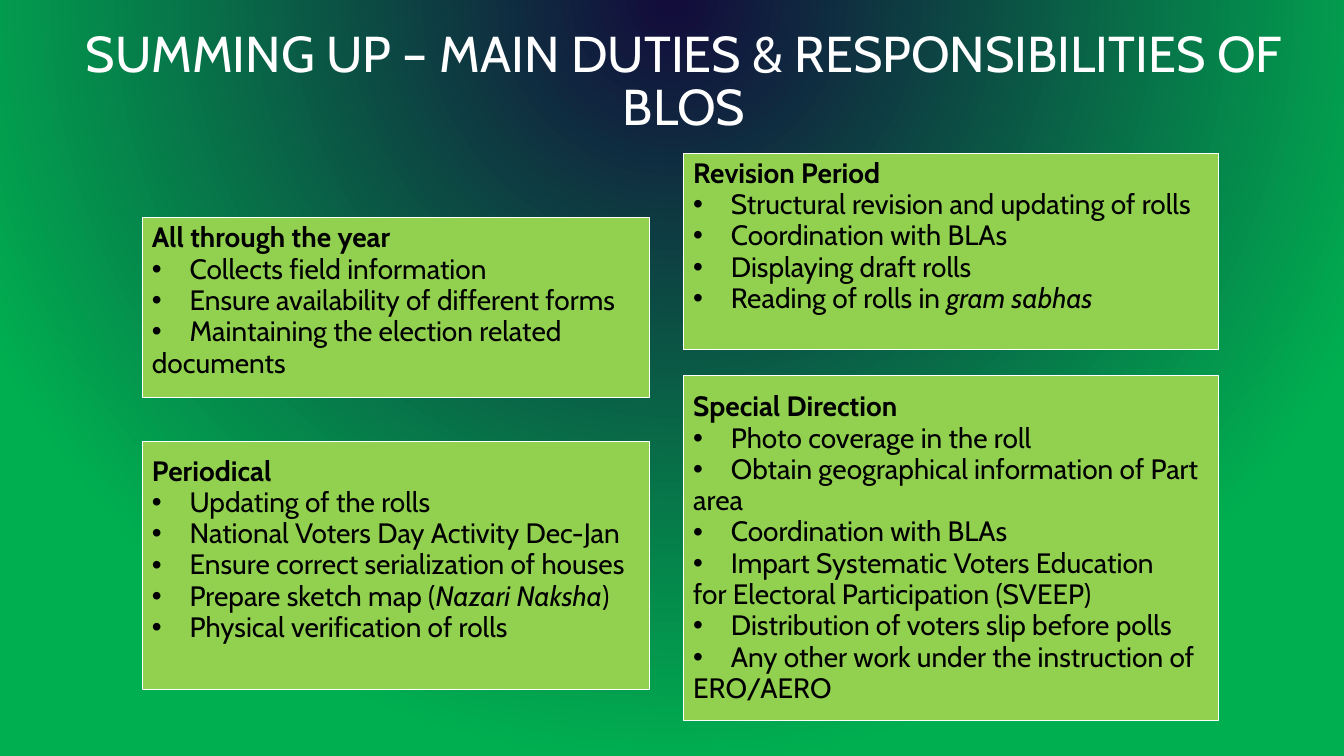
import lxml.etree
import pptx
import pptx.dml.color
import pptx.enum.shapes
import pptx.enum.text
import pptx.oxml
import pptx.oxml.ns
import pptx.util

Cm = pptx.util.Cm
Pt = pptx.util.Pt
RGBColor = pptx.dml.color.RGBColor
Anchor = pptx.enum.text.MSO_ANCHOR
qn = pptx.oxml.ns.qn

WHITE = RGBColor(0xFF, 0xFF, 0xFF)
BLACK = RGBColor(0, 0, 0)
LIME = RGBColor(0x92, 0xD0, 0x50)
NAVY = RGBColor(0x13, 0x0D, 0x3C)
GREEN = RGBColor(0x00, 0xB0, 0x50)
FONT = "Cabin"

LEFT_COLUMN = (3.58, 12.8)
RIGHT_COLUMN = (17.22, 13.49)
INSET = 0.13
BULLET_INDENT = Cm(0.95)

# "_" encloses italics; "\n" starts an unbulleted line
DUTIES = [
    (LEFT_COLUMN, 5.49, 4.52, Anchor.TOP, INSET, "All through the year", [
        "Collects field information",
        "Ensure availability of different forms",
        "Maintaining the election related\ndocuments",
    ]),
    (LEFT_COLUMN, 11.13, 6.25, Anchor.MIDDLE, 0.92, "Periodical", [
        "Updating of the rolls",
        "National Voters Day Activity Dec-Jan",
        "Ensure correct serialization of houses",
        "Prepare sketch map (_Nazari Naksha_)",
        "Physical verification of rolls",
    ]),
    (RIGHT_COLUMN, 3.86, 4.95, Anchor.TOP, INSET, "Revision Period", [
        "Structural revision and updating of rolls",
        "Coordination with BLAs",
        "Displaying draft rolls",
        "Reading of rolls in _gram sabhas_",
    ]),
    (RIGHT_COLUMN, 9.47, 8.69, Anchor.MIDDLE, INSET, "Special Direction", [
        "Photo coverage in the roll",
        "Obtain geographical information of Part\narea",
        "Coordination with BLAs",
        "Impart Systematic Voters Education\nfor Electoral Participation (SVEEP)",
        "Distribution of voters slip before polls",
        "Any other work under the instruction of\nERO/AERO",
    ]),
]


def paint_background(slide):
    slide.background.fill.gradient()
    gradient = next(slide.element.iter(qn("a:gradFill")))
    for part in list(gradient):
        gradient.remove(part)
    for part in (
        f'<a:gsLst {pptx.oxml.ns.nsdecls("a")}>'
        f'<a:gs pos="1000"><a:srgbClr val="{NAVY}"><a:alpha val="76000"/></a:srgbClr></a:gs>'
        f'<a:gs pos="100000"><a:srgbClr val="{GREEN}"/></a:gs></a:gsLst>',
        f'<a:path {pptx.oxml.ns.nsdecls("a")} path="circle">'
        '<a:fillToRect l="50000" t="-80000" r="50000" b="180000"/></a:path>',
    ):
        gradient.append(pptx.oxml.parse_xml(part))


def add_run(paragraph, text, size, color, bold=False, italic=False):
    run = paragraph.add_run()
    run.text = text
    run.font.name = FONT
    run.font.size = Pt(size)
    run.font.color.rgb = color
    run.font.bold = bold
    run.font.italic = italic


def add_bullet(paragraph):
    properties = paragraph._p.get_or_add_pPr()
    properties.set("marL", str(BULLET_INDENT))
    properties.set("indent", str(-BULLET_INDENT))
    color = lxml.etree.SubElement(properties, qn("a:buClr"))
    lxml.etree.SubElement(color, qn("a:srgbClr"), val=str(BLACK))
    lxml.etree.SubElement(properties, qn("a:buFont"), typeface="Arial")
    lxml.etree.SubElement(properties, qn("a:buChar"), char="•")


def add_title(slide, left, top, width, height):
    title = slide.shapes.add_textbox(Cm(left), Cm(top), Cm(width), Cm(height))
    title.text_frame.word_wrap = True
    paragraph = title.text_frame.paragraphs[0]
    paragraph.alignment = pptx.enum.text.PP_ALIGN.CENTER
    paragraph.line_spacing = 0.87
    add_run(paragraph, "SUMMING UP – MAIN DUTIES & RESPONSIBILITIES OF BLOS", 36, WHITE)


def add_duty_panel(slide, column, top, height, anchor, bottom_inset, heading, duties):
    left, width = column
    panel = slide.shapes.add_shape(
        pptx.enum.shapes.MSO_SHAPE.RECTANGLE, Cm(left), Cm(top), Cm(width), Cm(height))
    panel.shadow.inherit = False
    panel.fill.solid()
    panel.fill.fore_color.rgb = LIME
    panel.line.color.rgb = WHITE
    panel.line.width = Pt(0.75)

    frame = panel.text_frame
    frame.word_wrap = True
    frame.vertical_anchor = anchor
    frame.margin_top = Cm(INSET)
    frame.margin_bottom = Cm(bottom_inset)

    def add_line():
        paragraph = frame.add_paragraph() if frame.text else frame.paragraphs[0]
        paragraph.alignment = pptx.enum.text.PP_ALIGN.LEFT
        paragraph.line_spacing = 0.93
        return paragraph

    add_run(add_line(), heading, 20, BLACK, bold=True)
    for duty in duties:
        for line_number, line in enumerate(duty.split("\n")):
            paragraph = add_line()
            if line_number == 0:
                add_bullet(paragraph)
            for piece_number, piece in enumerate(line.split("_")):
                if piece:
                    add_run(paragraph, piece, 20, BLACK, italic=piece_number % 2 == 1)


def main():
    presentation = pptx.Presentation()
    presentation.slide_width = Cm(33.87)
    presentation.slide_height = Cm(19.05)
    slide = presentation.slides.add_slide(presentation.slide_layouts[6])
    paint_background(slide)
    add_title(slide, 1.3, 0.64, 31.88, 3.2)
    for panel in DUTIES:
        add_duty_panel(slide, *panel)
    presentation.save("out.pptx")


if __name__ == "__main__":
    main()
